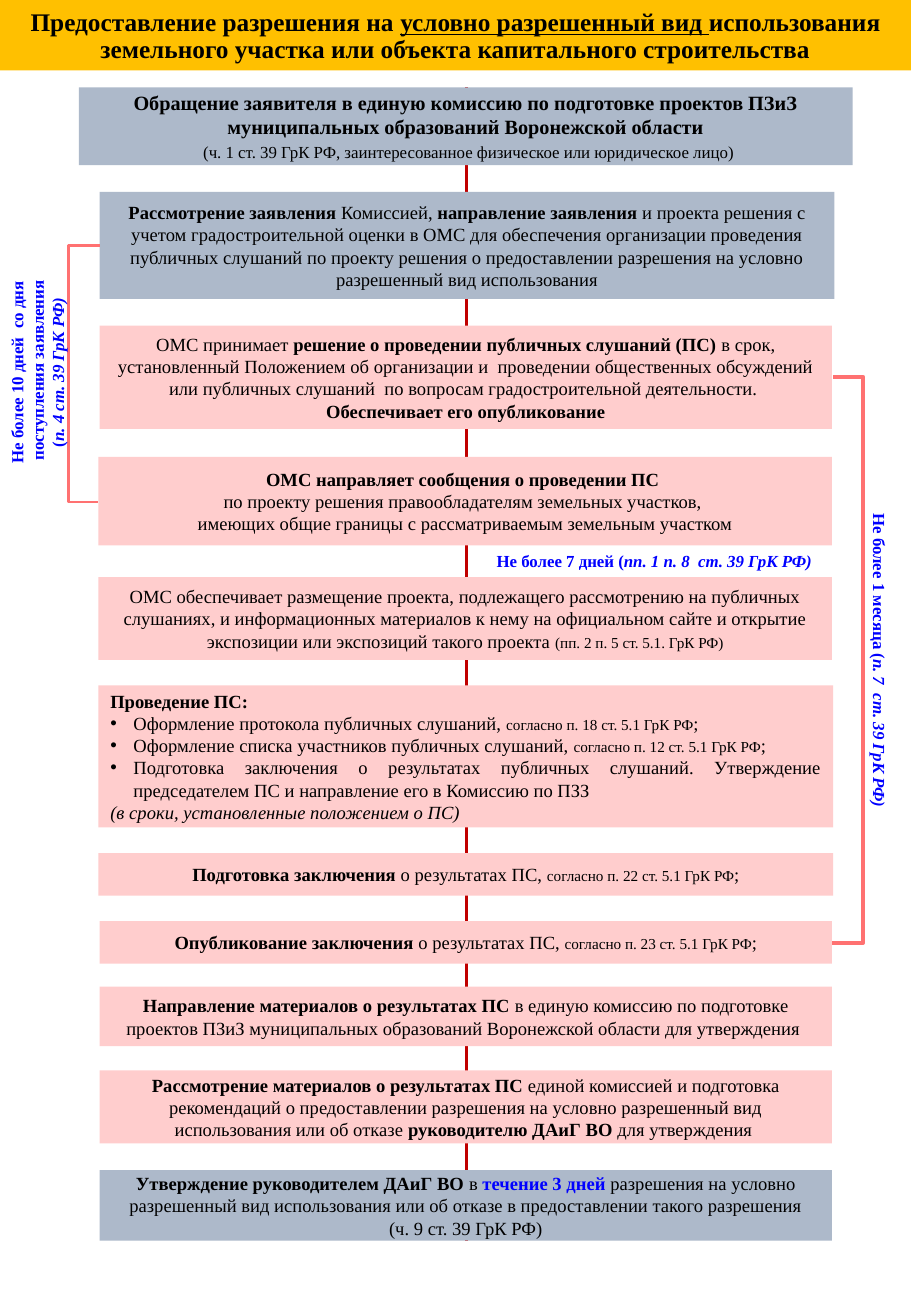
from dataclasses import dataclass

from lxml import etree
from pptx import Presentation
from pptx.dml.color import RGBColor
from pptx.enum.shapes import MSO_CONNECTOR, MSO_SHAPE
from pptx.enum.text import MSO_ANCHOR, MSO_AUTO_SIZE, PP_ALIGN
from pptx.oxml.ns import qn
from pptx.util import Inches, Pt

RECT = MSO_SHAPE.RECTANGLE
STRAIGHT, ELBOW = MSO_CONNECTOR.STRAIGHT, MSO_CONNECTOR.ELBOW
CENTER, JUSTIFY = PP_ALIGN.CENTER, PP_ALIGN.JUSTIFY
MIDDLE, BOTTOM, TOP = MSO_ANCHOR.MIDDLE, MSO_ANCHOR.BOTTOM, MSO_ANCHOR.TOP
FIT_SHAPE = MSO_AUTO_SIZE.SHAPE_TO_FIT_TEXT

FONT = "Times New Roman"
COLORS = {
    "title": "FFC000", "commission": "ADB9CA", "oms": "FFCDCD",
    "spine": "C00000", "bracket": "FF7171", "text": "000000", "term": "0000FF",
}
BULLET_INDENT = 0.19


@dataclass
class Run:
    text: str
    bold: bool = False
    italic: bool = False
    underline: bool = False
    size: float | None = None
    color: str | None = None


@dataclass
class Para:
    runs: list[Run]
    align: PP_ALIGN = CENTER
    bullet: bool = False


@dataclass
class Box:
    left: float
    top: float
    width: float
    height: float
    fill: str
    paras: list[Para]
    size: float = 11
    anchor: MSO_ANCHOR = MIDDLE
    line_spacing: float | None = None


@dataclass
class Term:
    left: float
    top: float
    width: float
    height: float
    paras: list[Para]
    rotation: float = 0


@dataclass
class Bracket:
    start: tuple[float, float]
    end: tuple[float, float]
    via_x: float
    weight: float


def bold(text: str, **fmt) -> Run:
    return Run(text, bold=True, **fmt)


def centered(*runs: Run) -> Para:
    return Para(list(runs))


def justified(*runs: Run, bullet: bool = False) -> Para:
    return Para(list(runs), JUSTIFY, bullet)


def law(article: str) -> list[Run]:
    """Small reference to the code, closed by a full-size semicolon."""
    return [Run(f"согласно {article} ГрК РФ", size=9), Run(";")]


def term(text: str, article: str) -> Para:
    return centered(bold(text), bold(article, italic=True))


TITLE = Box(0, 0, 7.5, 0.58, "title", [centered(
    bold("Предоставление разрешения на "),
    bold("условно разрешенный вид ", underline=True),
    bold("использования земельного участка или объекта капитального строительства"),
)], size=15, anchor=BOTTOM, line_spacing=0.9)

STEPS = [
    Box(0.65, 0.72, 6.37, 0.64, "commission", [
        centered(bold("Обращение заявителя в единую комиссию по подготовке проектов ПЗиЗ "
                      "муниципальных образований Воронежской области")),
        centered(bold(" "), Run("(ч. 1 ст. 39 ГрК РФ, заинтересованное физическое или "
                                "юридическое лицо)", size=10)),
    ], size=12),
    Box(0.82, 1.58, 6.05, 0.88, "commission", [centered(
        bold("Рассмотрение заявления "), Run("Комиссией, "), bold("направление заявления "),
        Run("и проекта решения с учетом градостроительной оценки в ОМС для обеспечения "
            "организации проведения публичных слушаний по проекту решения о предоставлении "
            "разрешения на условно разрешенный вид использования"))]),
    Box(0.82, 2.68, 6.03, 0.85, "oms", [
        centered(Run("ОМС принимает "), bold("решение о проведении публичных слушаний (ПС) "),
                 Run("в срок, установленный Положением об организации и  проведении "
                     "общественных обсуждений или публичных слушаний  по вопросам "
                     "градостроительной деятельности. ")),
        centered(bold("Обеспечивает его опубликование")),
    ]),
    Box(0.81, 3.76, 6.04, 0.73, "oms", [
        centered(bold("ОМС направляет сообщения о проведении ПС ")),
        centered(Run("по проекту решения правообладателям земельных участков, ")),
        centered(Run("имеющих общие границы с рассматриваемым земельным участком")),
    ]),
    Box(0.81, 4.75, 6.04, 0.68, "oms", [centered(
        Run("ОМС обеспечивает размещение проекта, подлежащего рассмотрению на публичных "
            "слушаниях, и информационных материалов к нему на официальном сайте и открытие "
            "экспозиции или экспозиций такого проекта "),
        Run("(пп. 2 п. 5 ст. 5.1. ГрК РФ)", size=9))]),
    Box(0.81, 5.64, 6.05, 1.17, "oms", [
        justified(bold("Проведение ПС: ")),
        justified(Run("Оформление протокола публичных слушаний, "),
                  *law("п. 18 ст. 5.1"), bullet=True),
        justified(Run("Оформление списка участников публичных слушаний, "),
                  *law("п. 12 ст. 5.1"), bullet=True),
        justified(Run("Подготовка заключения о результатах публичных слушаний. Утверждение "
                      "председателем ПС и направление его в Комиссию по ПЗЗ "), bullet=True),
        justified(Run("(в сроки, установленные положением о ПС)", italic=True)),
    ]),
    Box(0.81, 7.02, 6.05, 0.35, "oms", [centered(
        bold("Подготовка заключения "), Run("о результатах ПС, "), *law("п. 22 ст. 5.1"))]),
    Box(0.82, 7.58, 6.03, 0.35, "oms", [centered(
        bold("Опубликование заключения "), Run("о результатах ПС, "), *law("п. 23 ст. 5.1"))]),
    Box(0.82, 8.12, 6.03, 0.49, "oms", [centered(
        bold("Направление материалов о результатах ПС "),
        Run("в единую комиссию по подготовке проектов ПЗиЗ муниципальных образований "
            "Воронежской области для утверждения "))]),
    Box(0.82, 8.81, 6.03, 0.6, "oms", [centered(
        bold("Рассмотрение материалов о результатах ПС "),
        Run("единой комиссией и подготовка рекомендаций о предоставлении разрешения на "
            "условно разрешенный вид использования или об отказе "),
        bold("руководителю ДАиГ ВО "), Run("для утверждения "))]),
    Box(0.82, 9.63, 6.03, 0.58, "commission", [
        centered(bold("Утверждение руководителем ДАиГ ВО "), Run("в "),
                 bold("течение 3 дней ", color="term"),
                 Run("разрешения на условно разрешенный вид использования или об отказе "
                     "в предоставлении такого разрешения")),
        centered(Run("(ч. 9 ст. 39 ГрК РФ)")),
    ]),
]

TERMS = [
    Term(-0.64, 2.76, 1.9, 0.61, [
        centered(bold("Не более 10 дней  со дня")),
        centered(bold(" поступления заявления")),
        term("(", "п. 4 ст. 39 ГрК РФ)"),
    ], rotation=270),
    Term(4.91, 5.3, 4.66, 0.27, [term("Не более 1 месяца (", "п. 7  ст. 39 ГрК РФ)")], rotation=90),
    Term(3.91, 4.48, 2.95, 0.27, [term("Не более 7 дней (", "пп. 1 п. 8  ст. 39 ГрК РФ)")]),
]

BRACKETS = [
    Bracket((0.82, 2.02), (0.81, 4.13), 0.56, 1.5),
    Bracket((6.86, 3.1), (6.85, 7.76), 7.11, 2.25),
]


def rgb(name: str) -> RGBColor:
    return RGBColor.from_string(COLORS[name])


def add_run(p, text: str, *, size: float, color: str, bold: bool = False,
            italic: bool = False, underline: bool = False) -> None:
    r = p.add_run()
    r.text = text
    font = r.font
    font.name, font.size = FONT, Pt(size)
    font.bold, font.italic, font.underline = bold, italic, underline
    font.color.rgb = rgb(color)


def add_bullet(p) -> None:
    pPr = p._p.get_or_add_pPr()
    pPr.set("marL", str(Inches(BULLET_INDENT)))
    pPr.set("indent", str(-Inches(BULLET_INDENT)))
    etree.SubElement(pPr, qn("a:buFont"), typeface="Arial")
    etree.SubElement(pPr, qn("a:buChar"), char="•")


def write_paras(tf, paras: list[Para], *, size: float, color: str = "text",
                anchor: MSO_ANCHOR = MIDDLE, line_spacing: float | None = None) -> None:
    tf.word_wrap, tf.vertical_anchor = True, anchor
    for i, para in enumerate(paras):
        p = tf.add_paragraph() if i else tf.paragraphs[0]
        p.alignment, p.line_spacing = para.align, line_spacing
        if para.bullet:
            add_bullet(p)
        for r in para.runs:
            add_run(p, r.text, size=r.size or size, color=r.color or color,
                    bold=r.bold, italic=r.italic, underline=r.underline)


def add_box(s, box: Box) -> None:
    sp = s.shapes.add_shape(RECT, *map(Inches, (box.left, box.top, box.width, box.height)))
    sp.shadow.inherit = False
    sp.fill.solid()
    sp.fill.fore_color.rgb = rgb(box.fill)
    sp.line.fill.background()
    write_paras(sp.text_frame, box.paras, size=box.size, anchor=box.anchor,
                line_spacing=box.line_spacing)


def add_term(s, t: Term) -> None:
    sp = s.shapes.add_textbox(*map(Inches, (t.left, t.top, t.width, t.height)))
    sp.rotation = t.rotation
    write_paras(sp.text_frame, t.paras, size=10, color="term", anchor=TOP)
    sp.text_frame.auto_size = FIT_SHAPE


def add_line(s, kind: MSO_CONNECTOR, start: tuple[float, float], end: tuple[float, float],
             color: str, weight: float):
    line = s.shapes.add_connector(kind, *map(Inches, (*start, *end)))
    line.line.color.rgb, line.line.width = rgb(color), Pt(weight)
    etree.SubElement(line.element.spPr, qn("a:effectLst"))
    return line


def add_bracket(s, b: Bracket) -> None:
    """Elbow connector whose upright part stands at via_x."""
    line = add_line(s, ELBOW, b.start, b.end, "bracket", b.weight)
    bend = round((b.via_x - b.start[0]) / (b.end[0] - b.start[0]) * 100000)
    guides = line.element.spPr.find(qn("a:prstGeom")).find(qn("a:avLst"))
    etree.SubElement(guides, qn("a:gd"), name="adj1", fmla=f"val {bend}")


def main() -> None:
    prs = Presentation()
    prs.slide_width, prs.slide_height = Inches(7.5), Inches(10.83)
    s = prs.slides.add_slide(prs.slide_layouts[6])
    add_line(s, STRAIGHT, (3.84, 0.72), (3.84, 10.21), "spine", 1.5)
    for box in [TITLE, *STEPS]:
        add_box(s, box)
    for bracket in BRACKETS:
        add_bracket(s, bracket)
    for t in TERMS:
        add_term(s, t)
    prs.save("out.pptx")


if __name__ == "__main__":
    main()
